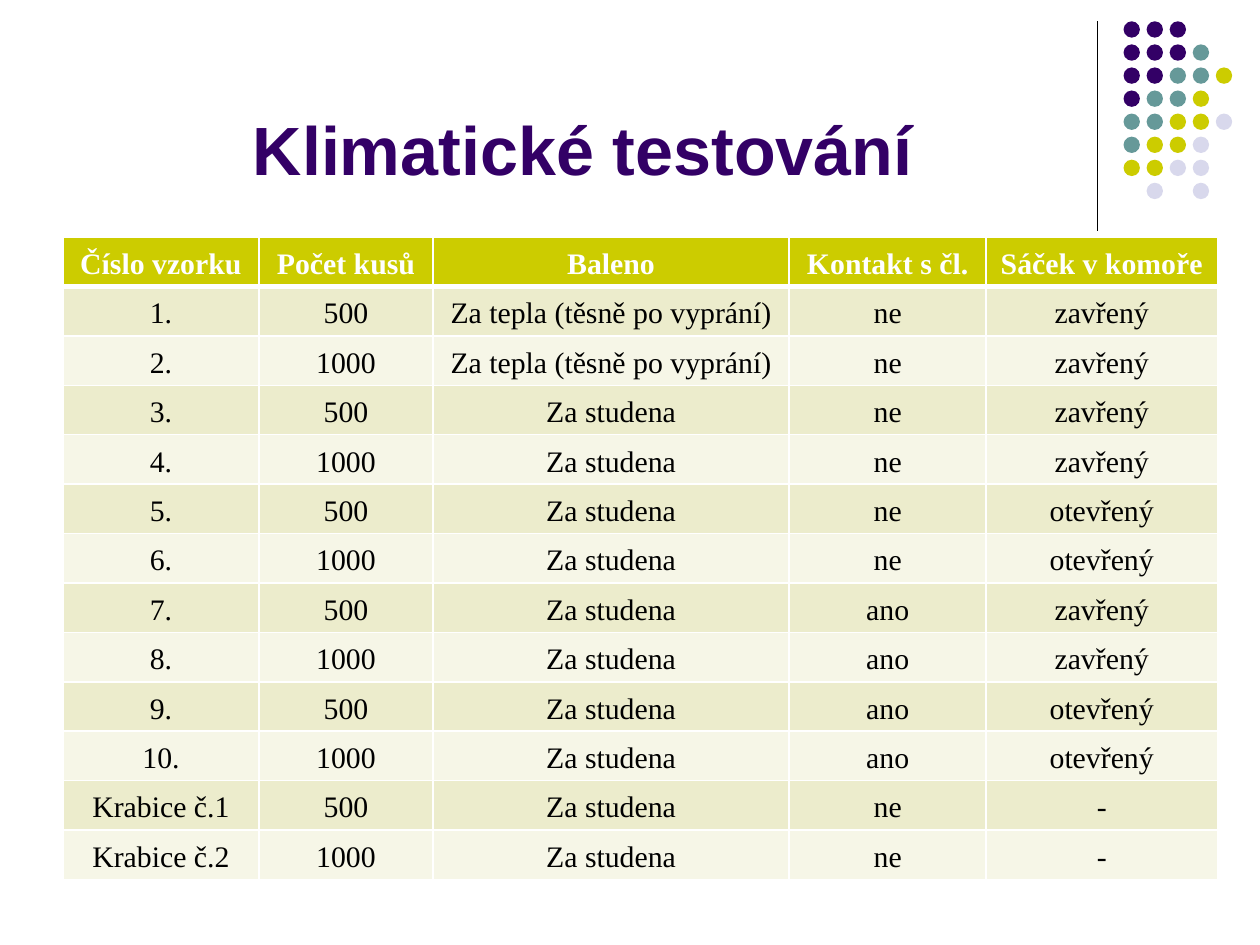
from lxml import etree
from pptx import Presentation
from pptx import util as u
from pptx.dml.color import RGBColor
from pptx.enum import shapes, text
from pptx.oxml import ns

TITLE = "Klimatické testování"
HEADINGS = ["Číslo vzorku", "Počet kusů", "Baleno", "Kontakt s čl.", "Sáček v komoře"]
WARM, COLD = "Za tepla (těsně po vyprání)", "Za studena"
SAMPLES = [
    ("1.", "500", WARM, "ne", "zavřený"),
    ("2.", "1000", WARM, "ne", "zavřený"),
    ("3.", "500", COLD, "ne", "zavřený"),
    ("4.", "1000", COLD, "ne", "zavřený"),
    ("5.", "500", COLD, "ne", "otevřený"),
    ("6.", "1000", COLD, "ne", "otevřený"),
    ("7.", "500", COLD, "ano", "zavřený"),
    ("8.", "1000", COLD, "ano", "zavřený"),
    ("9.", "500", COLD, "ano", "otevřený"),
    ("10.", "1000", COLD, "ano", "otevřený"),
    ("Krabice č.1", "500", COLD, "ne", "-"),
    ("Krabice č.2", "1000", COLD, "ne", "-"),
]
COLUMN_WIDTHS = [3.95, 3.51, 7.18, 3.97, 4.66]
TABLE_HEIGHT = 12.95

# One letter per dot, a space where there is none
DOTS = ["PPP", "PPPT", "PPTTY", "PTTY", "TTYYL", "TYYL", "YYLL", " L L"]
DOT_COLOURS = {"P": "330066", "T": "669999", "Y": "CCCC00", "L": "D8D8EC"}
DOT_LEFT, DOT_TOP, DOT_SIZE = 22.65, 0.43, 0.33
DOT_PITCH = 1.86 / 4

WHITE, BLACK = "FFFFFF", "000000"
HEADING_FILL, BAND_FILLS = "CCCC00", ["ECECCC", "F6F6E7"]


def colour(hex_string):
    return RGBColor.from_string(hex_string)


def style_font(paragraph, name, size, hex_string, bold):
    for run in paragraph.runs:
        run.font.name, run.font.size, run.font.bold = name, u.Pt(size), bold
        run.font.color.rgb = colour(hex_string)


def add_border(cell, sides):
    """Draw white borders; sides maps L, R, T, B (in that order) to points."""
    properties = cell._tc.get_or_add_tcPr()
    for position, (side, points) in enumerate(sides.items()):
        border = etree.Element(ns.qn(f"a:ln{side}"), w=str(u.Pt(points)))
        fill = etree.SubElement(border, ns.qn("a:solidFill"))
        etree.SubElement(fill, ns.qn("a:srgbClr"), val=WHITE)
        properties.insert(position, border)


def add_decoration(slide):
    rule = slide.shapes.add_connector(
        shapes.MSO_CONNECTOR.STRAIGHT, u.Cm(22.12), u.Cm(0.43), u.Cm(22.12), u.Cm(4.65))
    rule.line.color.rgb = colour(BLACK)
    rule.line.width = u.Pt(0.75)
    etree.SubElement(rule._element.spPr, ns.qn("a:effectLst"))

    for row, letters in enumerate(DOTS):
        for column, letter in enumerate(letters):
            if letter == " ":
                continue
            dot = slide.shapes.add_shape(
                shapes.MSO_SHAPE.OVAL,
                u.Cm(DOT_LEFT + column * DOT_PITCH), u.Cm(DOT_TOP + row * DOT_PITCH),
                u.Cm(DOT_SIZE), u.Cm(DOT_SIZE))
            dot.shadow.inherit = False
            dot.fill.solid()
            dot.fill.fore_color.rgb = colour(DOT_COLOURS[letter])
            dot.line.fill.background()


def add_title(slide):
    title = slide.shapes.add_textbox(u.Cm(1.27), u.Cm(0.33), u.Cm(20.96), u.Cm(3.61))
    frame = title.text_frame
    frame.word_wrap = True
    frame.vertical_anchor = text.MSO_ANCHOR.BOTTOM
    frame.text = TITLE
    frame.paragraphs[0].alignment = text.PP_ALIGN.CENTER
    style_font(frame.paragraphs[0], "Arial", 39, DOT_COLOURS["P"], True)


def add_samples(slide):
    rows = [HEADINGS, *SAMPLES]
    table = slide.shapes.add_table(
        len(rows), len(HEADINGS), u.Cm(1.27), u.Cm(4.78),
        u.Cm(sum(COLUMN_WIDTHS)), u.Cm(TABLE_HEIGHT)).table
    table.horz_banding = False
    for column, width in zip(table.columns, COLUMN_WIDTHS):
        column.width = u.Cm(width)

    for i, values in enumerate(rows):
        heading = i == 0
        table.rows[i].height = u.Cm(TABLE_HEIGHT / len(rows))
        for j, value in enumerate(values):
            cell = table.cell(i, j)
            cell.text_frame.text = value
            cell.vertical_anchor = text.MSO_ANCHOR.MIDDLE
            cell.margin_left = cell.margin_right = u.Cm(0.28)
            cell.margin_top = cell.margin_bottom = 0
            cell.fill.solid()
            cell.fill.fore_color.rgb = colour(
                HEADING_FILL if heading else BAND_FILLS[(i - 1) % 2])
            add_border(cell, {"L": 1, "R": 1, "T": 3 if i == 1 else 1,
                              "B": 3 if heading else 1})
            paragraph = cell.text_frame.paragraphs[0]
            paragraph.alignment = text.PP_ALIGN.CENTER
            paragraph.line_spacing = 1.15
            style_font(paragraph, "Times New Roman", 17,
                       WHITE if heading else BLACK, heading)


def main():
    deck = Presentation()
    deck.slide_width, deck.slide_height = u.Cm(25.4), u.Cm(19.05)
    slide = deck.slides.add_slide(deck.slide_layouts[6])
    add_decoration(slide)
    add_title(slide)
    add_samples(slide)
    deck.save("out.pptx")


if __name__ == "__main__":
    main()
